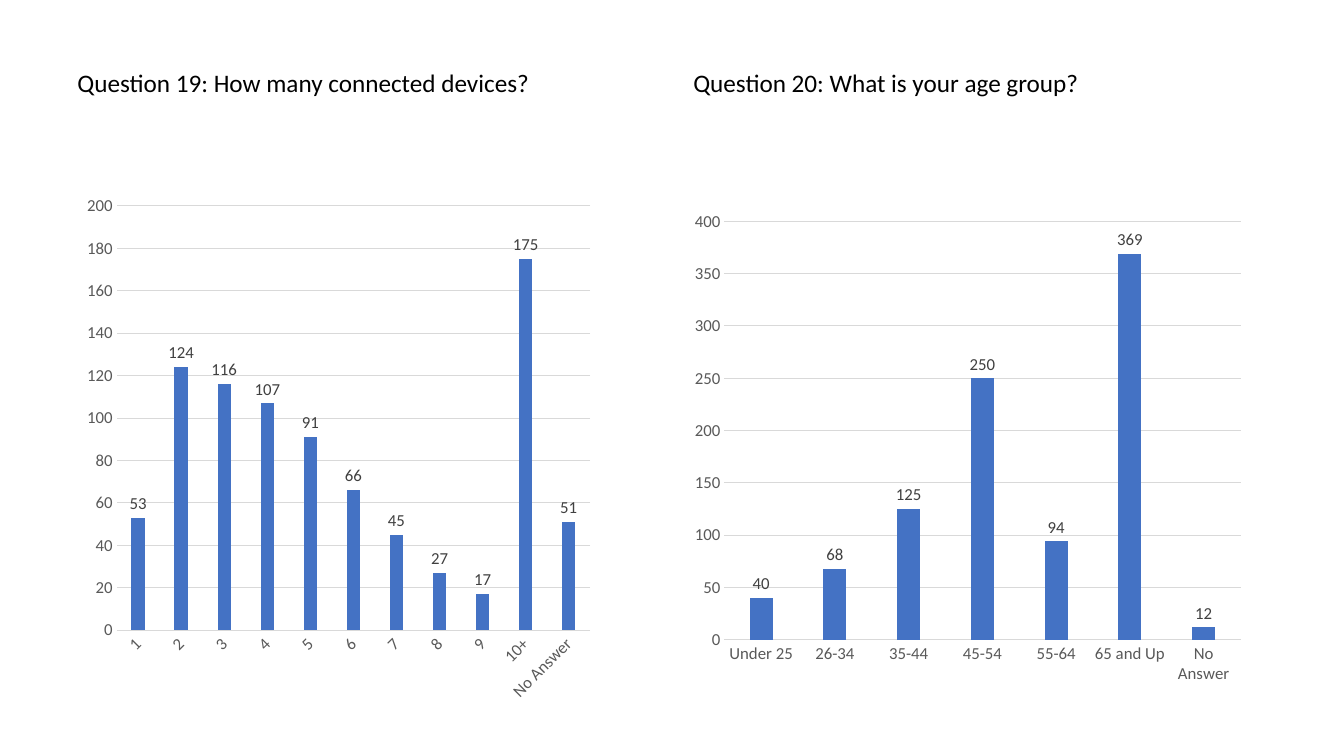
import dataclasses
import typing

import pptx
import pptx.chart.axis
import pptx.chart.data
import pptx.dml.color
import pptx.dml.fill
import pptx.dml.line
import pptx.enum.chart
import pptx.enum.text
import pptx.slide
import pptx.text.text
import pptx.util

Pt = pptx.util.Pt


@dataclasses.dataclass(frozen=True)
class Theme:
    font: str = "Calibri"
    text: str = "000000"
    axis_text: str = "595959"
    label_text: str = "404040"
    rule: str = "D9D9D9"
    bar: str = "4472C4"
    heading_size: float = 18
    chart_size: float = 12
    rule_width: float = 0.75


class Area(typing.NamedTuple):
    left: float
    top: float
    width: float
    height: float

    def lengths(self) -> list[pptx.util.Length]:
        return [Pt(value) for value in self]


@dataclasses.dataclass(frozen=True)
class Question:
    heading: str
    heading_area: Area
    chart_area: Area
    answers: dict[str, int]
    axis_maximum: int
    axis_step: int
    label_rotation: typing.Optional[int] = None


THEME = Theme()

QUESTIONS = [
    Question(
        heading="Question 19: How many connected devices?",
        heading_area=Area(48.24, 44.64, 349.92, 28.8),
        chart_area=Area(54.72, 132.48, 374.4, 375.84),
        answers={"1": 53, "2": 124, "3": 116, "4": 107, "5": 91, "6": 66,
                 "7": 45, "8": 27, "9": 17, "10+": 175, "No Answer": 51},
        axis_maximum=200,
        axis_step=20,
        label_rotation=-45,
    ),
    Question(
        heading="Question 20: What is your age group?",
        heading_area=Area(488.16, 44.64, 362.88, 28.8),
        chart_area=Area(488.16, 144, 406.08, 351.36),
        answers={"Under 25": 40, "26-34": 68, "35-44": 125, "45-54": 250,
                 "55-64": 94, "65 and Up": 369, "No Answer": 12},
        axis_maximum=400,
        axis_step=50,
    ),
]


def set_font(font: pptx.text.text.Font, size: float, color: str) -> None:
    font.name = THEME.font
    font.size = Pt(size)
    font.bold = False
    font.color.rgb = pptx.dml.color.RGBColor.from_string(color)


def set_rule(line: pptx.dml.line.LineFormat) -> None:
    line.color.rgb = pptx.dml.color.RGBColor.from_string(THEME.rule)
    line.width = Pt(THEME.rule_width)


def add_heading(slide: pptx.slide.Slide, question: Question) -> None:
    box = slide.shapes.add_textbox(*question.heading_area.lengths())
    frame = box.text_frame
    frame.word_wrap = True
    frame.auto_size = pptx.enum.text.MSO_AUTO_SIZE.SHAPE_TO_FIT_TEXT
    para = frame.paragraphs[0]
    para.text = question.heading
    set_font(para.font, THEME.heading_size, THEME.text)


def add_answer_chart(slide: pptx.slide.Slide, question: Question) -> None:
    data = pptx.chart.data.CategoryChartData()
    data.categories = list(question.answers)
    data.add_series("Series 1", list(question.answers.values()))
    chart = slide.shapes.add_chart(
        pptx.enum.chart.XL_CHART_TYPE.COLUMN_CLUSTERED,
        *question.chart_area.lengths(), data).chart
    chart.has_legend = False
    chart.has_title = False
    set_font(chart.font, THEME.chart_size, THEME.text)

    for axis in (chart.category_axis, chart.value_axis):
        axis.major_tick_mark = pptx.enum.chart.XL_TICK_MARK.NONE
        axis.minor_tick_mark = pptx.enum.chart.XL_TICK_MARK.NONE
        set_font(axis.tick_labels.font, THEME.chart_size, THEME.axis_text)
    set_rule(chart.category_axis.format.line)
    if question.label_rotation is not None:
        body = chart.category_axis._element.txPr.bodyPr
        body.set("rot", str(question.label_rotation * 60000))
        body.set("vert", "horz")

    values = chart.value_axis
    values.minimum_scale = 0
    values.maximum_scale = question.axis_maximum
    values.major_unit = question.axis_step
    values.format.line.fill.background()
    values.has_major_gridlines = True
    set_rule(values.major_gridlines.format.line)

    plot = chart.plots[0]
    plot.gap_width = 219
    plot.overlap = -27
    plot.vary_by_categories = False
    fill = plot.series[0].format.fill
    fill.solid()
    fill.fore_color.rgb = pptx.dml.color.RGBColor.from_string(THEME.bar)
    labels = plot.series[0].data_labels
    labels.show_value = True
    labels.position = pptx.enum.chart.XL_LABEL_POSITION.OUTSIDE_END
    set_font(labels.font, THEME.chart_size, THEME.label_text)


def main() -> None:
    deck = pptx.Presentation()
    deck.slide_width, deck.slide_height = Pt(960), Pt(540)
    slide = deck.slides.add_slide(deck.slide_layouts[6])
    for question in QUESTIONS:
        add_heading(slide, question)
        add_answer_chart(slide, question)
    deck.save("out.pptx")


if __name__ == "__main__":
    main()
